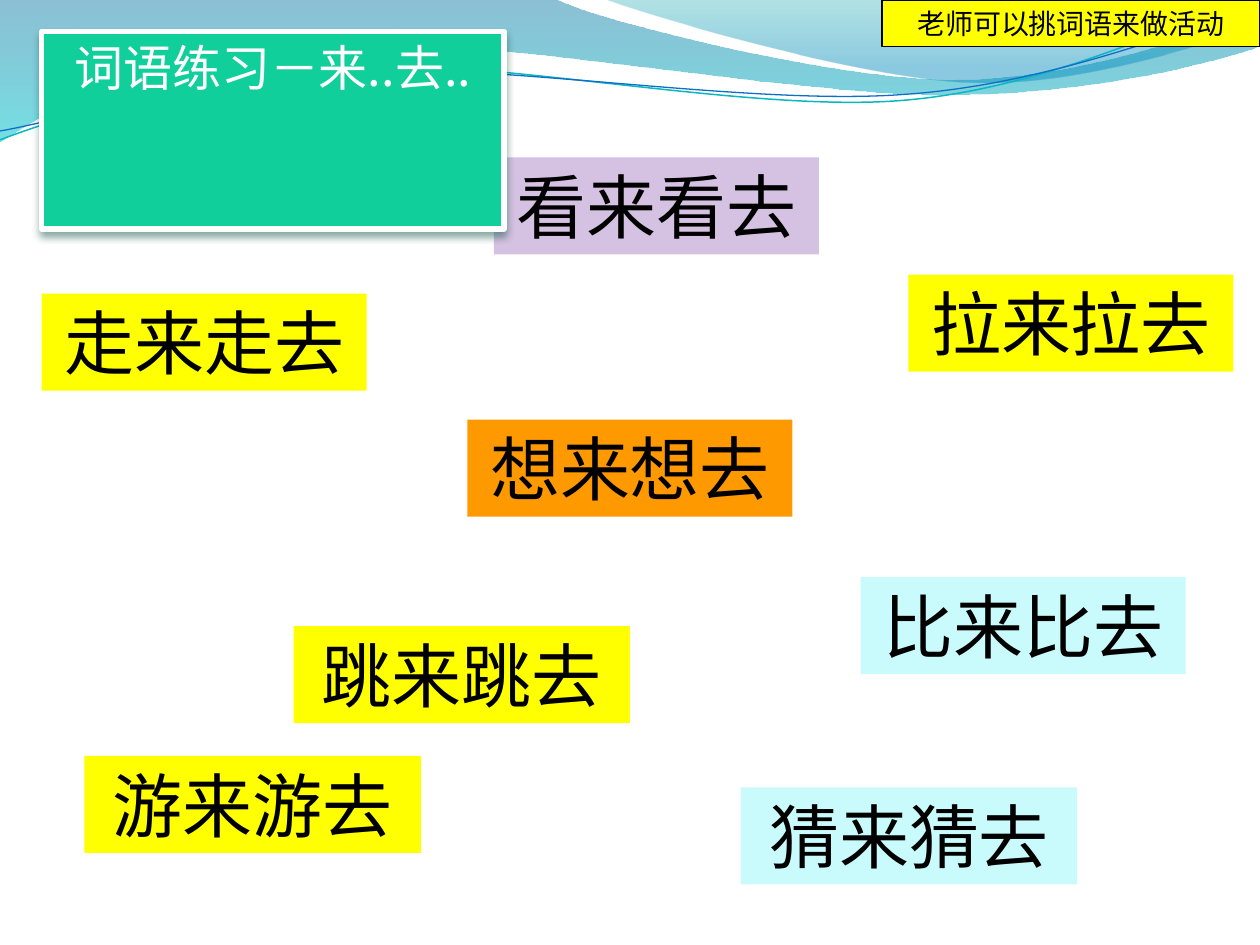
from lxml.etree import SubElement
from pptx import Presentation
from pptx.dml.color import RGBColor
from pptx.enum.shapes import MSO_SHAPE
from pptx.enum.text import MSO_ANCHOR, MSO_AUTO_SIZE, PP_ALIGN
from pptx.oxml.ns import qn
from pptx.util import Inches, Pt

FONT = "Noto Sans CJK SC"
BLACK = RGBColor(0x00, 0x00, 0x00)
WHITE = RGBColor(0xFF, 0xFF, 0xFF)
YELLOW = RGBColor(0xFF, 0xFF, 0x00)
AQUA = RGBColor(0xC9, 0xFA, 0xFC)
LILAC = RGBColor(0xD5, 0xC1, 0xE1)
ORANGE = RGBColor(0xFF, 0x99, 0x00)
GREEN = RGBColor(0x10, 0xCF, 0x9B)
TEAL = RGBColor(0x0A, 0xB8, 0xBF)
BLUE = RGBColor(0x0F, 0x6F, 0xC6)

TITLE = "词语练习－来..去.."
NOTE = "老师可以挑词语来做活动"
CARD_H = 0.77
CARDS = [
    ("游来游去", 0.67, 6, 2.67, YELLOW),
    ("跳来跳去", 2.33, 4.97, 2.67, YELLOW),
    ("走来走去", 0.33, 2.33, 2.58, YELLOW),
    ("拉来拉去", 7.21, 2.18, 2.58, YELLOW),
    ("比来比去", 6.83, 4.58, 2.58, AQUA),
    ("猜来猜去", 5.88, 6.25, 2.67, AQUA),
    ("看来看去", 3.92, 1.25, 2.58, LILAC),
]
CENTER_CARD = ("想来想去", 3.71, 3.33, 2.58, ORANGE)

WAVES = [
    ((0, 0),
     [[(4.4, -0.01)],
      [(4.76, 0.17), (6.64, 0.63), (7.58, 0.63)],
      [(8.53, 0.63), (9.58, 0.26), (10, 0.09)],
      [(10.01, 0.36)],
      [(9.83, 0.44), (8.7, 0.76), (7.46, 0.75)],
      [(6.22, 0.75), (3.82, 0.28), (2.57, 0.34)],
      [(1.29, 0.36), (0.46, 0.83), (-0.01, 1.13)],
      [(0, 0)]],
     [(0, "0074A1", 45), (100, "00C6CF", 55)]),
    ((4.79, -0.01),
     [[(5.09, 0.11), (6.82, 0.62), (7.69, 0.65)],
      [(8.56, 0.69), (9.61, 0.32), (10, 0.21)],
      [(10, 0)],
      [(4.79, -0.01)]],
     [(0, "00A1A9", 30), (80, "008BBF", 45)]),
]
STRANDS = [
    ((0, 1.11),
     [[(0.48, 0.93), (1.58, 0.57), (2.77, 0.52)],
      [(3.95, 0.47), (5.93, 0.89), (7.13, 0.8)],
      [(8.33, 0.71), (9.38, 0.15), (9.98, -0.02)]],
     TEAL, 0.85),
    ((0, 1.04),
     [[(0.47, 0.96), (1.64, 0.61), (2.83, 0.56)],
      [(4.03, 0.51), (5.97, 0.84), (7.17, 0.75)],
      [(8.36, 0.67), (9.41, 0.21), (10, 0.06)]],
     BLUE, 0.75),
]


def add_curve(s, start, steps, close):
    fb = s.shapes.build_freeform(Inches(start[0]), Inches(start[1]), scale=1.0)
    ends = [(Inches(x), Inches(y)) for x, y in (step[-1] for step in steps)]
    fb.add_line_segments(ends, close=close)
    sp = fb.convert_to_shape()
    sp.shadow.inherit = False
    lines = list(sp.element.iter(qn("a:lnTo")))
    for line, step in zip(lines, steps):
        if len(step) == 3:
            line.tag = qn("a:cubicBezTo")
            line.remove(line[0])
            for x, y in step:
                SubElement(line, qn("a:pt"), x=str(Inches(x) - sp.left),
                           y=str(Inches(y) - sp.top))
    return sp


def add_color(parent, rgb, alpha):
    clr = SubElement(parent, qn("a:srgbClr"), val=rgb)
    SubElement(clr, qn("a:alpha"), val=str(alpha * 1000))


def set_gradient(sp, stops):
    sp.fill.gradient()
    sp.fill.gradient_angle = 270
    gs_lst = sp.element.spPr.find(qn("a:gradFill")).find(qn("a:gsLst"))
    for gs in list(gs_lst):
        gs_lst.remove(gs)
    for pos, rgb, alpha in stops:
        add_color(SubElement(gs_lst, qn("a:gs"), pos=str(pos * 1000)), rgb, alpha)


def format_box(sp, text, box, fill, size, color=BLACK, line=None):
    for name, value in zip(("left", "top", "width", "height"), box):
        setattr(sp, name, Inches(value))
    sp.shadow.inherit = False
    sp.fill.solid()
    sp.fill.fore_color.rgb = fill
    if line:
        sp.line.color.rgb, sp.line.width = line[0], Pt(line[1])
    else:
        sp.line.fill.background()
    tf = sp.text_frame
    frame = {"word_wrap": True, "auto_size": MSO_AUTO_SIZE.SHAPE_TO_FIT_TEXT,
             "vertical_anchor": MSO_ANCHOR.TOP}
    for name, value in frame.items():
        setattr(tf, name, value)
    p = tf.paragraphs[0]
    p.alignment = PP_ALIGN.CENTER
    r = p.add_run()
    r.text = text
    for name, value in {"name": FONT, "size": Pt(size)}.items():
        setattr(r.font, name, value)
    r.font.color.rgb = color
    SubElement(r.font._element, qn("a:ea"), typeface=FONT)


def add_box(s, *args, **kwargs):
    sp = s.shapes.add_shape(MSO_SHAPE.RECTANGLE, 0, 0, 0, 0)
    format_box(sp, *args, **kwargs)


def add_card(s, text, x, y, w, fill):
    add_box(s, text, (x, y, w, CARD_H), fill, 40)


def add_title(s):
    title = s.shapes.title
    format_box(title, TITLE, (0.33, 0.25, 3.67, 0.57), GREEN, 28, WHITE, (WHITE, 3))
    effects = title.element.spPr.find(qn("a:effectLst"))
    shadow = SubElement(effects, qn("a:outerShdw"), blurRad=str(Pt(4.5)),
                        dist=str(Pt(3)), dir="5400000", rotWithShape="0")
    add_color(shadow, "044A37", 48)
    s.shapes.element.append(title.element)


def main():
    prs = Presentation()
    prs.slide_width, prs.slide_height = Inches(10), Inches(7.5)
    s = prs.slides.add_slide(prs.slide_layouts[5])

    for start, steps, stops in WAVES:
        sp = add_curve(s, start, steps, True)
        set_gradient(sp, stops)
        sp.line.fill.background()
    for start, steps, color, width in STRANDS:
        sp = add_curve(s, start, steps, False)
        sp.fill.background()
        sp.line.color.rgb, sp.line.width = color, Pt(width)

    for card in CARDS:
        add_card(s, *card)
    add_title(s)
    add_card(s, *CENTER_CARD)
    add_box(s, NOTE, (7, 0, 3, 0.37), YELLOW, 16, line=(BLACK, 0.75))

    prs.save("out.pptx")


if __name__ == "__main__":
    main()
